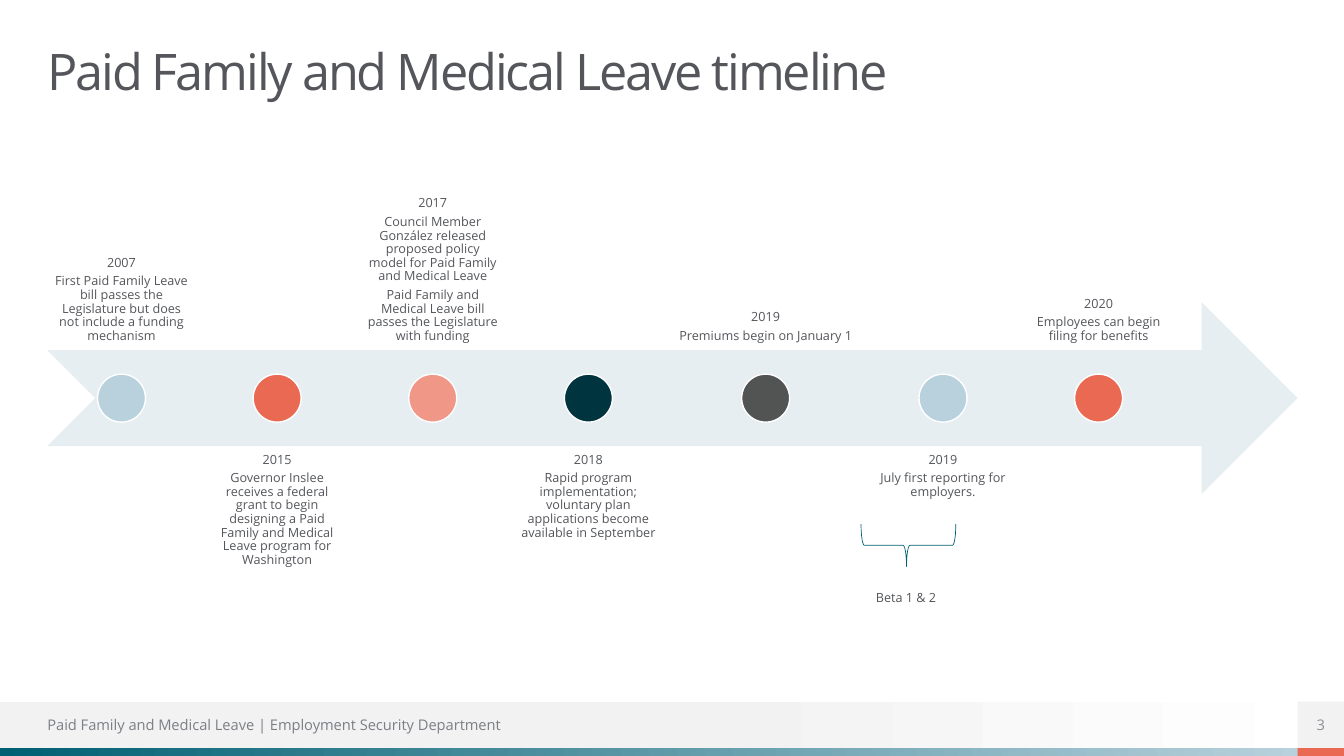
from dataclasses import dataclass

from pptx import Presentation
from pptx.dml.color import RGBColor
from pptx.enum.shapes import MSO_SHAPE
from pptx.enum.text import MSO_ANCHOR, MSO_AUTO_SIZE, PP_ALIGN
from pptx.util import Inches, Pt

RECT, OVAL = MSO_SHAPE.RECTANGLE, MSO_SHAPE.OVAL
ARROW, BRACE = MSO_SHAPE.NOTCHED_RIGHT_ARROW, MSO_SHAPE.LEFT_BRACE
TOP, MIDDLE, BOTTOM = MSO_ANCHOR.TOP, MSO_ANCHOR.MIDDLE, MSO_ANCHOR.BOTTOM
LEFT, CENTER = PP_ALIGN.LEFT, PP_ALIGN.CENTER
FIT_SHAPE = MSO_AUTO_SIZE.SHAPE_TO_FIT_TEXT


@dataclass(frozen=True)
class Theme:
    font: str = "Open Sans"
    title_size: float = 36
    footer_size: float = 10.5
    label_size: float = 9
    text: str = "54565B"
    footer_text: str = "7C7F86"
    number_text: str = "8E9096"
    band: str = "F2F2F2"
    white: str = "FFFFFF"
    arrow: str = "E6EEF2"
    teal: str = "006073"
    dark_teal: str = "00343E"
    pale_blue: str = "B8D1DC"
    coral: str = "E96952"
    pink: str = "F09788"
    gray: str = "525353"


THEME = Theme()
SLIDE_W, SLIDE_H = 13.33, 7.5
MARGIN = 0.47
CONTENT_W = 12.4

# Milestone: box width, dot colour, paragraphs; they alternate above and below
MILESTONES = [
    (1.47, THEME.pale_blue, [
        "2007",
        "First Paid Family Leave bill passes the Legislature "
        "but does not include a funding mechanism"]),
    (1.47, THEME.coral, [
        "2015",
        "Governor Inslee receives a federal grant to begin designing "
        "a Paid Family and Medical Leave program for Washington"]),
    (1.47, THEME.pink, [
        "2017",
        "Council Member González released proposed policy model "
        "for Paid Family and Medical Leave",
        "Paid Family and Medical Leave bill passes the Legislature with funding"]),
    (1.47, THEME.dark_teal, [
        "2018",
        "Rapid program implementation; voluntary plan applications "
        "become available in September"]),
    (1.9, THEME.gray, ["2019", "Premiums begin on January 1"]),
    (1.47, THEME.pale_blue, ["2019", "July first reporting for employers."]),
    (1.47, THEME.coral, ["2020", "Employees can begin filing for benefits"]),
]


def rgb(color):
    return RGBColor.from_string(color)


def apply(target, formats):
    for name, value in formats.items():
        setattr(target, name, value)


def add_form(shapes, preset, box, fill=None, outline=None, weight=1):
    form = shapes.add_shape(preset, *map(Inches, box))
    form.shadow.inherit = False
    if fill:
        form.fill.solid()
        form.fill.fore_color.rgb = rgb(fill)
    else:
        form.fill.background()
    if outline:
        form.line.color.rgb = rgb(outline)
        form.line.width = Pt(weight)
    else:
        form.line.fill.background()
    return form


def add_fade(shapes, box, stops):
    strip = add_form(shapes, RECT, box)
    strip.fill.gradient()
    strip.fill.gradient_angle = 0
    for stop, (position, color) in zip(strip.fill.gradient_stops, stops):
        stop.position = position
        stop.color.rgb = rgb(color)


def write(holder, paragraphs, size, color, anchor=TOP, align=LEFT,
          insets=(0, 0), spacing=1.0, after=0, tracking=None):
    side, edge = map(Inches, insets)
    frame = holder.text_frame
    apply(frame, {"word_wrap": True, "vertical_anchor": anchor,
                  "margin_left": side, "margin_right": side,
                  "margin_top": edge, "margin_bottom": edge})
    for index, wording in enumerate(paragraphs):
        paragraph = frame.add_paragraph() if index else frame.paragraphs[0]
        apply(paragraph, {"alignment": align, "line_spacing": spacing,
                          "space_after": Pt(after)})
        run = paragraph.add_run()
        run.text = wording
        apply(run.font, {"name": THEME.font, "size": Pt(size)})
        run.font.color.rgb = rgb(color)
        if tracking is not None:
            run.font._element.set("spc", str(round(tracking * 100)))


def add_text(shapes, box, *args, **formats):
    holder = shapes.add_textbox(*map(Inches, box))
    write(holder, *args, **formats)
    return holder


def add_title(shapes, box):
    add_text(shapes, box, ["Paid Family and Medical Leave timeline"],
             THEME.title_size, THEME.text, spacing=0.9, tracking=-1.5)


def add_footer(shapes, box):
    left, top, width, height = box
    rule = 0.08
    band = height - rule
    body = width - band
    # Grey band and coloured rule
    add_fade(shapes, (left, top, width, band),
             [(0.53, THEME.band), (1, THEME.white)])
    add_fade(shapes, (left, top + band, body, rule),
             [(0, THEME.teal), (1, THEME.pale_blue)])
    add_form(shapes, RECT, (left + body, top + band, band, rule), THEME.coral)
    # Page number and department
    number = add_form(shapes, RECT, (left + body, top, band, band), THEME.band)
    write(number, ["3"], THEME.footer_size, THEME.number_text, MIDDLE, CENTER)
    add_text(shapes, (left + MARGIN, top, 5.98, band),
             ["Paid Family and Medical Leave | Employment Security Department"],
             THEME.footer_size, THEME.footer_text, MIDDLE)


def add_timeline(shapes, box):
    left, top, width, height = box
    group = shapes.add_group_shape().shapes
    arrow_h = height * 0.4
    middle = top + height / 2
    dot = arrow_h / 4
    gap = 0.05 * MILESTONES[0][0]
    add_form(group, ARROW, (left, middle - arrow_h / 2, width, arrow_h), THEME.arrow)

    # Labels and dots
    for index, (label_w, color, paragraphs) in enumerate(MILESTONES):
        below = index % 2
        label_top = top + height - arrow_h if below else top
        add_text(group, (left, label_top, label_w, arrow_h), paragraphs,
                 THEME.label_size, THEME.text, TOP if below else BOTTOM, CENTER,
                 insets=(0.07, 0.07), spacing=0.9, after=3.4)
        add_form(group, OVAL,
                 (left + (label_w - dot) / 2, middle - dot / 2, dot, dot),
                 color, THEME.white)
        left += label_w + gap


def add_beta_note(shapes, box):
    left, top, width, height = box
    depth, span = 0.42, 0.94
    # The brace is turned to point down, so its frame is upright
    brace = add_form(shapes, BRACE,
                     (left + (width - depth) / 2, top + (depth - span) / 2, depth, span),
                     outline=THEME.teal, weight=0.5)
    brace.rotation = 270
    brace.adjustments[0], brace.adjustments[1] = 0.08, 0.48
    note_h = 0.25
    note = add_text(shapes, (left + 0.05, top + height - note_h, 0.84, note_h),
                    ["Beta 1 & 2"], THEME.label_size, THEME.text, insets=(0.1, 0.05))
    note.text_frame.auto_size = FIT_SHAPE


def main():
    deck = Presentation()
    apply(deck, {"slide_width": Inches(SLIDE_W), "slide_height": Inches(SLIDE_H)})
    shapes = deck.slides.add_slide(deck.slide_layouts[6]).shapes
    add_footer(shapes, (0, 6.96, SLIDE_W, 0.54))
    add_title(shapes, (MARGIN, 0.47, CONTENT_W, 0.47))
    add_timeline(shapes, (MARGIN, 1.57, CONTENT_W, 4.76))
    add_beta_note(shapes, (8.54, 5.2, 0.94, 0.85))
    deck.save("out.pptx")


if __name__ == "__main__":
    main()
